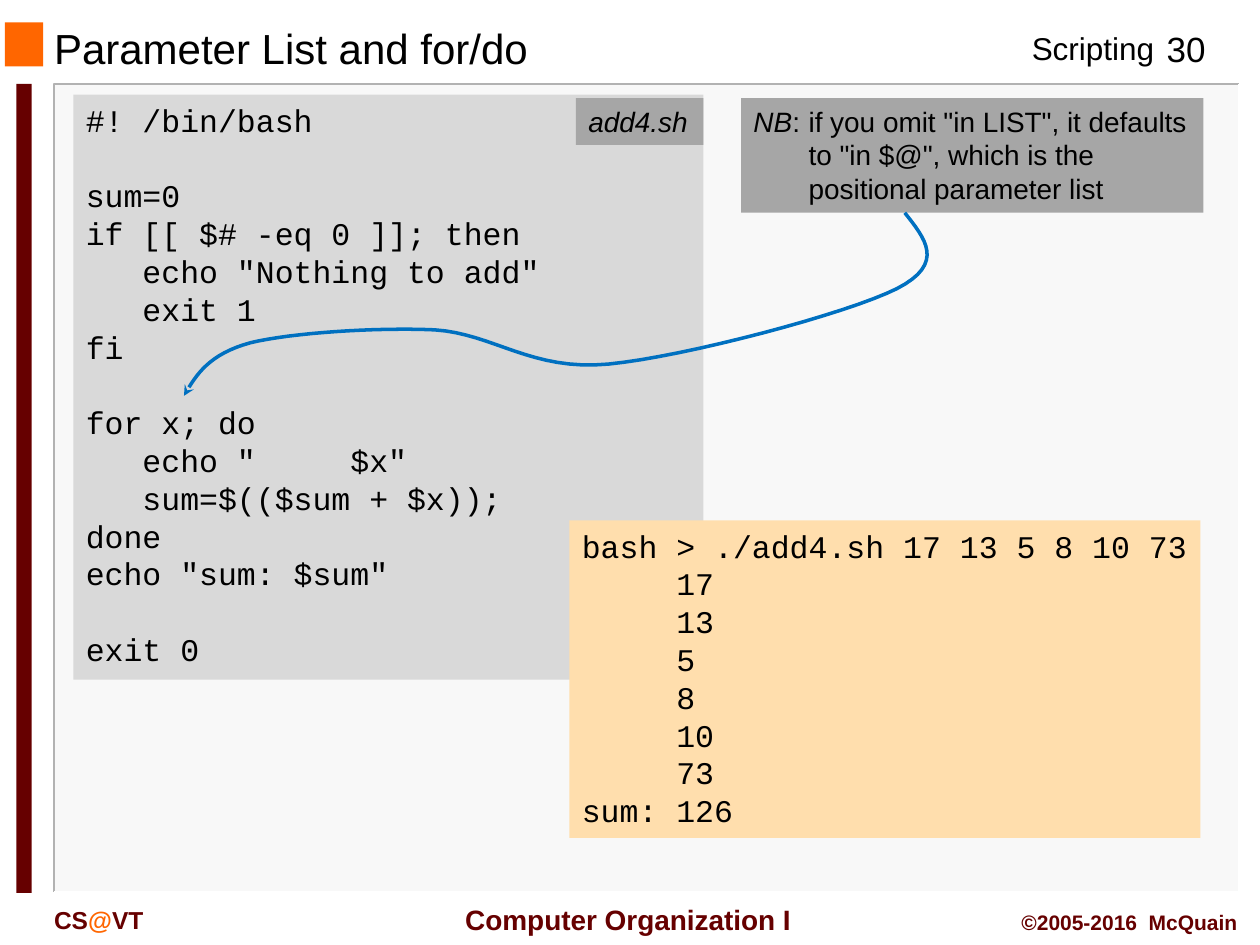
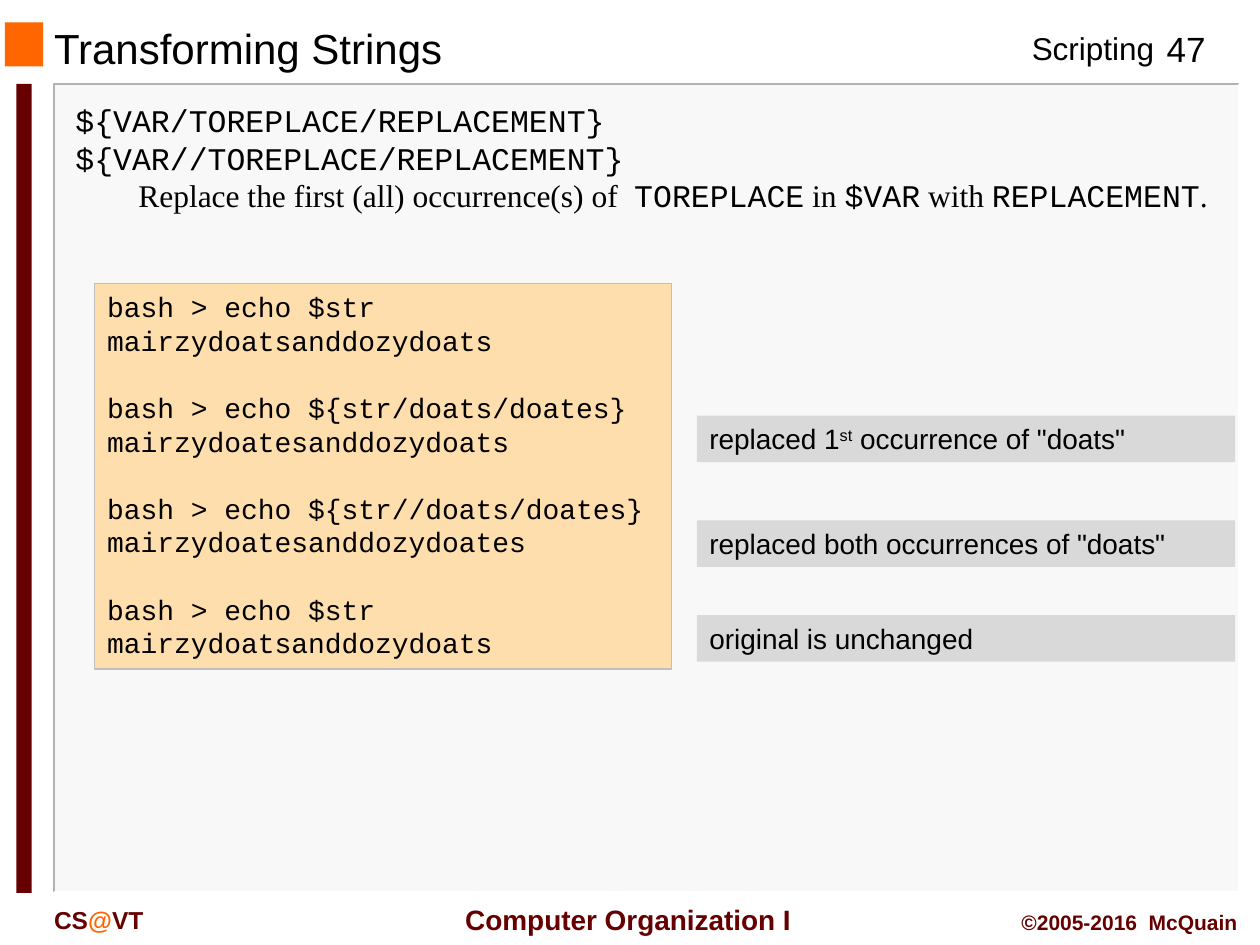
from dataclasses import dataclass
from typing import Optional

from lxml.etree import SubElement
from pptx import Presentation
from pptx.dml.color import RGBColor
from pptx.enum.shapes import MSO_SHAPE as Preset
from pptx.enum.text import MSO_ANCHOR as Anchor, PP_ALIGN as Align
from pptx.oxml.ns import qn
from pptx.util import Cm, Pt

BLACK = RGBColor(0x00, 0x00, 0x00)
WHITE = RGBColor(0xFF, 0xFF, 0xFF)
MAROON = RGBColor(0x66, 0x00, 0x00)
ORANGE = RGBColor(0xFF, 0x66, 0x00)
PANEL = RGBColor(0xF8, 0xF8, 0xF8)
EDGE = RGBColor(0xB2, 0xB2, 0xB2)
LIGHT_GREY = RGBColor(0xD9, 0xD9, 0xD9)
MID_GREY = RGBColor(0xA6, 0xA6, 0xA6)
FRAME_GREY = RGBColor(0xBF, 0xBF, 0xBF)
SAND = RGBColor(0xFF, 0xDE, 0xAD)
BLUE = RGBColor(0x00, 0x70, 0xC0)

SANS = "Arial"
MONO = "Courier New"
SERIF = "Times New Roman"
MONO_ADVANCE = 0.6
LINE_PITCH = 1.2
CURVE_STEPS = 16

Point = tuple[float, float]


@dataclass(frozen=True)
class Area:
    left: float
    top: float
    width: float
    height: float

    def lengths(self) -> tuple[Cm, Cm, Cm, Cm]:
        return Cm(self.left), Cm(self.top), Cm(self.width), Cm(self.height)


@dataclass(frozen=True)
class TextRun:
    text: str
    size: float = 16
    font: str = SANS
    color: RGBColor = BLACK
    bold: bool = False
    italic: bool = False
    superscript: bool = False


@dataclass(frozen=True)
class Line:
    runs: tuple[TextRun, ...]
    margin: float = 0
    hanging: float = 0
    gap_lines: int = 0
    align: Align = Align.LEFT


@dataclass(frozen=True)
class Box:
    area: Area
    lines: tuple[Line, ...] = ()
    fill: Optional[RGBColor] = None
    outline: Optional[RGBColor] = None
    anchor: Anchor = Anchor.TOP


PANEL_AREA = Area(1.09, 1.7, 23.88, 16.28)
BANDS = (
    Box(PANEL_AREA, fill=PANEL),
    Box(Area(0.1, 0.45, 0.77, 0.89), fill=ORANGE),
    Box(Area(0.33, 1.69, 0.31, 16.31), fill=MAROON),
)
FOOTERS = (
    Box(Area(8.84, 18.06, 7.49, 0.94),
        (Line((TextRun(" Computer Organization I", 16, color=MAROON, bold=True),),
              align=Align.CENTER),), anchor=Anchor.MIDDLE),
    Box(Area(0.84, 18.11, 3.81, 0.84),
        (Line(tuple(TextRun(text, 14, color=color, bold=True)
                    for text, color in (("CS", MAROON), ("@", ORANGE), ("VT", MAROON)))),)),
    Box(Area(17.78, 18.21, 7.42, 0.76),
        (Line((TextRun("©2005-2016  McQuain", 12, color=MAROON, bold=True),),
              align=Align.RIGHT),)),
)

ADD_SCRIPT = """#! /bin/bash

sum=0
if [[ $# -eq 0 ]]; then
   echo "Nothing to add"
   exit 1
fi

for x; do
   echo "     $x"
   sum=$(($sum + $x));
done
echo "sum: $sum"

exit 0"""

ADD_OUTPUT = """bash > ./add4.sh 17 13 5 8 10 73
     17
     13
     5
     8
     10
     73
sum: 126"""

REPLACE_SESSION = """bash > echo $str
mairzydoatsanddozydoats

bash > echo ${str/doats/doates}
mairzydoatesanddozydoats

bash > echo ${str//doats/doates}
mairzydoatesanddozydoates

bash > echo $str
mairzydoatsanddozydoats"""

ARROW_START: Point = (18.24, 4.29)
ARROW_CURVES: tuple[tuple[Point, Point, Point], ...] = (
    ((18.64, 4.8), (19.08, 5.31), (18.08, 5.82)),
    ((17.09, 6.32), (13.82, 7.19), (12.27, 7.34)),
    ((10.72, 7.49), (9.96, 6.73), (8.76, 6.65)),
    ((7.54, 6.6), (5.89, 6.71), (5.05, 6.91)),
    ((4.22, 7.14), (3.96, 7.54), (3.71, 7.98)),
)


def code_lines(code: str, size: float) -> tuple[Line, ...]:
    lines: list[Line] = []
    gap_lines = 0
    for row in code.splitlines():
        text = row.lstrip()
        if not text:
            gap_lines += 1
            continue
        indent = (len(row) - len(text)) * MONO_ADVANCE * size
        lines.append(Line((TextRun(text, size, MONO),), indent, gap_lines=gap_lines))
        gap_lines = 0
    return tuple(lines)


def add_run(paragraph, item: TextRun) -> None:
    run = paragraph.add_run()
    run.text = item.text
    run.font.name = item.font
    run.font.size = Pt(item.size)
    run.font.bold = item.bold
    run.font.italic = item.italic
    run.font.color.rgb = item.color
    if item.superscript:
        run._r.get_or_add_rPr().set("baseline", "30000")


def write_lines(frame, lines: tuple[Line, ...]) -> None:
    for index, line in enumerate(lines):
        paragraph = frame.add_paragraph() if index else frame.paragraphs[0]
        pitch = LINE_PITCH * line.runs[0].size
        paragraph.alignment = line.align
        paragraph.line_spacing = Pt(pitch)
        paragraph.space_before = Pt(line.gap_lines * pitch)
        properties = paragraph._p.get_or_add_pPr()
        properties.set("marL", str(Pt(line.margin)))
        properties.set("indent", str(-Pt(line.hanging)))
        for item in line.runs:
            add_run(paragraph, item)


def draw_box(slide, box: Box) -> None:
    if box.fill is None:
        shape = slide.shapes.add_textbox(*box.area.lengths())
    else:
        shape = slide.shapes.add_shape(Preset.RECTANGLE, *box.area.lengths())
        shape.shadow.inherit = False
        shape.fill.solid()
        shape.fill.fore_color.rgb = box.fill
        if box.outline is None:
            shape.line.fill.background()
        else:
            shape.line.color.rgb = box.outline
            shape.line.width = Pt(0.75)
    frame = shape.text_frame
    frame.word_wrap = True
    frame.vertical_anchor = box.anchor
    write_lines(frame, box.lines)


def draw_path(slide, points: list[Point], color: RGBColor, width: float):
    corners = [(Cm(x), Cm(y)) for x, y in points]
    builder = slide.shapes.build_freeform(*corners[0])
    builder.add_line_segments(corners[1:], close=False)
    shape = builder.convert_to_shape()
    shape.shadow.inherit = False
    shape.fill.background()
    shape.line.color.rgb = color
    shape.line.width = Pt(width)
    return shape


def curve_points() -> list[Point]:
    points = [ARROW_START]
    for first, second, end in ARROW_CURVES:
        anchors = (points[-1], first, second, end)
        for step in range(1, CURVE_STEPS + 1):
            t = step / CURVE_STEPS
            weights = ((1 - t) ** 3, 3 * t * (1 - t) ** 2, 3 * t * t * (1 - t), t ** 3)
            points.append((sum(w * p[0] for w, p in zip(weights, anchors)),
                           sum(w * p[1] for w, p in zip(weights, anchors))))
    return points


def draw_arrow(slide) -> None:
    shape = draw_path(slide, curve_points(), BLUE, 2)
    SubElement(shape.line._get_or_add_ln(), qn("a:tailEnd"), type="stealth")


def add_base_slide(presentation, title: str, number: int):
    slide = presentation.slides.add_slide(presentation.slide_layouts[6])
    for band in BANDS:
        draw_box(slide, band)
    left, top = PANEL_AREA.left, PANEL_AREA.top
    right, bottom = left + PANEL_AREA.width, top + PANEL_AREA.height
    draw_path(slide, [(right, top), (left, top), (left, bottom)], EDGE, 1)
    draw_path(slide, [(right, top), (right, bottom), (left, bottom)], WHITE, 1)
    headers = (
        Box(Area(20.55, 0.46, 3.2, 1.02), (Line((TextRun("Scripting", 18),)),)),
        Box(Area(23.06, 0.43, 1.7, 1.09),
            (Line((TextRun(str(number), 20),), align=Align.CENTER),)),
        Box(Area(0.84, 0.48, 16.08, 0.97), (Line((TextRun(title, 24),)),),
            anchor=Anchor.MIDDLE),
    )
    for box in headers + FOOTERS:
        draw_box(slide, box)
    return slide


def build_parameter_slide(presentation) -> None:
    slide = add_base_slide(presentation, "Parameter List and for/do", 30)
    note = Line((
        TextRun("NB", italic=True),
        TextRun(":\tif you omit \"in LIST\", it defaults to \"in $@\", "
                "which is the positional parameter list"),
    ), margin=31.5, hanging=31.5)
    draw_box(slide, Box(Area(1.48, 1.91, 12.7, 11.79), code_lines(ADD_SCRIPT, 18), LIGHT_GREY))
    draw_box(slide, Box(Area(14.94, 1.98, 9.32, 2.31), (note,), MID_GREY))
    draw_arrow(slide)
    draw_box(slide, Box(Area(11.48, 10.49, 12.72, 6.4), code_lines(ADD_OUTPUT, 18), SAND))
    draw_box(slide, Box(Area(11.61, 1.98, 2.57, 0.94),
                        (Line((TextRun("add4.sh", italic=True),)),), MID_GREY))


def build_replace_slide(presentation) -> None:
    slide = add_base_slide(presentation, "Transforming Strings", 47)
    syntax = code_lines("${VAR/TOREPLACE/REPLACEMENT}\n${VAR//TOREPLACE/REPLACEMENT}", 18)
    meaning = Line(tuple(TextRun(text, 18, font) for text, font in (
        ("Replace the first (all) occurrence(s) of  ", SERIF),
        ("TOREPLACE", MONO), (" in ", SERIF), ("$VAR", MONO),
        (" with ", SERIF), ("REPLACEMENT", MONO), (".", SERIF),
    )), margin=36)
    draw_box(slide, Box(Area(1.27, 1.91, 23.5, 2.57), syntax + (meaning,)))
    draw_box(slide, Box(Area(1.91, 5.72, 11.63, 7.77),
                        code_lines(REPLACE_SESSION, 16), SAND, FRAME_GREY))
    remarks = (
        (8.38, (TextRun("replaced 1"), TextRun("st", superscript=True),
                TextRun(" occurrence of \"doats\""))),
        (10.49, (TextRun("replaced both occurrences of \"doats\""),)),
        (12.4, (TextRun("original is unchanged"),)),
    )
    for top, runs in remarks:
        draw_box(slide, Box(Area(14.05, top, 10.85, 0.94), (Line(runs),), LIGHT_GREY))


def main() -> None:
    presentation = Presentation()
    presentation.slide_width = Cm(25.4)
    presentation.slide_height = Cm(19.05)
    build_parameter_slide(presentation)
    build_replace_slide(presentation)
    presentation.save("out.pptx")


if __name__ == "__main__":
    main()
